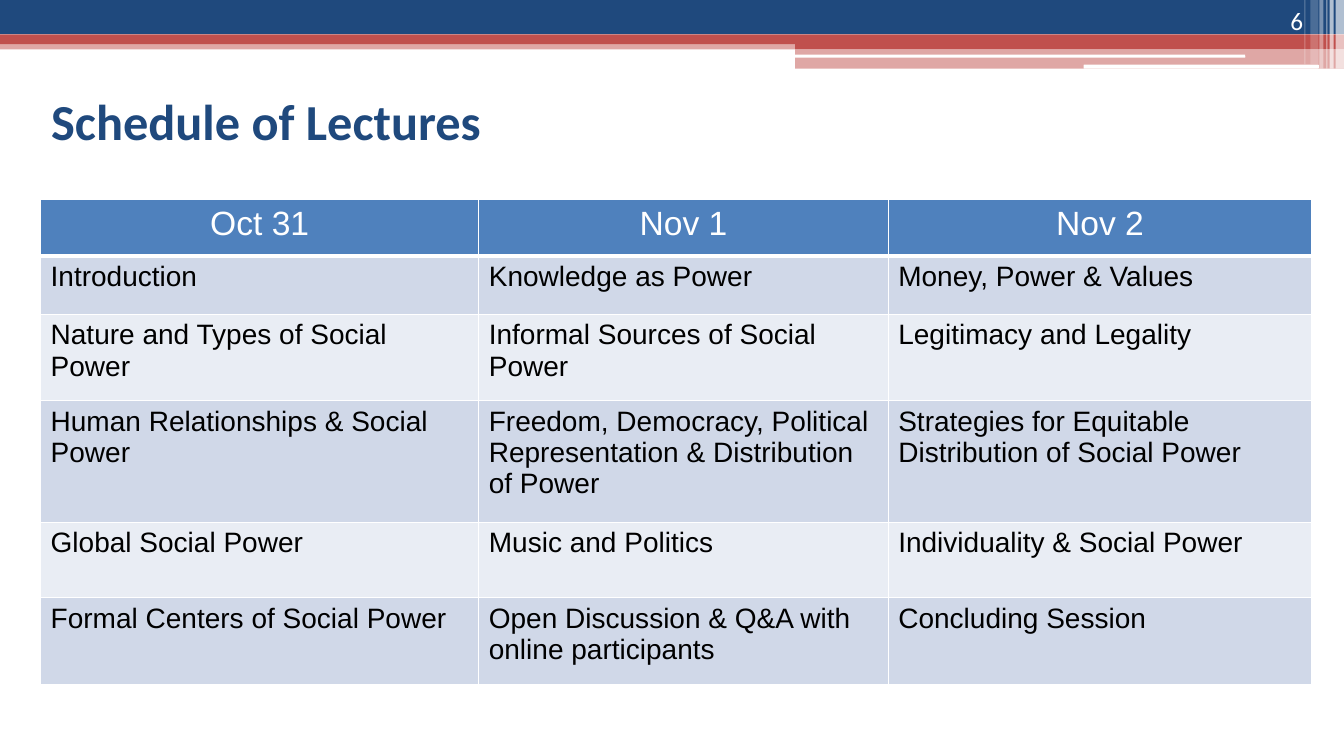
from lxml.etree import SubElement
from pptx import Presentation
from pptx.dml.color import RGBColor
from pptx.enum.shapes import MSO_SHAPE
from pptx.enum.text import MSO_ANCHOR, PP_ALIGN
from pptx.oxml.ns import qn
from pptx.util import Pt

NAVY, RED, WHITE, BLACK = "1F497D", "C0504D", "FFFFFF", "000000"
HEADER_FILL, ROW_FILLS = "4F81BD", ("D0D8E8", "E9EDF4")

TITLE = "Schedule of Lectures"
PAGE_NUMBER = "6"
SCHEDULE = [
    ("Oct 31", "Nov 1", "Nov 2"),
    ("Introduction", "Knowledge as Power", "Money, Power & Values"),
    ("Nature and Types of Social Power", "Informal Sources of Social Power",
     "Legitimacy and Legality"),
    ("Human Relationships & Social Power",
     "Freedom, Democracy, Political Representation & Distribution of Power",
     "Strategies for Equitable Distribution of Social Power"),
    ("Global Social Power", "Music and Politics", "Individuality & Social Power"),
    ("Formal Centers of Social Power",
     "Open Discussion & Q&A with online participants", "Concluding Session"),
]
COLUMN_WIDTHS = (313, 292.5, 302.5)
ROW_HEIGHTS = (40.3, 41.7, 61.7, 86.8, 54, 61.7)

# left, top, width, height, colour, opacity in percent
BANDS = [
    (0, 28.8, 960, 6.5, RED, 50),
    (0, 0, 960, 24.5, NAVY, 100),
    (0, 24.5, 960, 7, RED, 100),
    (568, 28, 392, 7.2, RED, 100),
    (568, 35.2, 392, 13.8, RED, 50),
]
ROUNDED_LINES = [(567.5, 39, 322, 2.2), (774, 46.2, 168, 2.8)]
# left, width, height, opacity in percent
STRIPES = [
    (954, 6, 49, 65),
    (949.7, 2.9, 49, 65),
    (947.5, 0.7, 49, 60),
    (942.5, 2.9, 49, 40),
    (936, 5.8, 46, 20),
    (931.7, 0.7, 46, 30),
]


def color(hex_code):
    return RGBColor.from_string(hex_code)


def add_block(page, left, top, width, height, fill, opacity=100, kind=MSO_SHAPE.RECTANGLE):
    block = page.shapes.add_shape(kind, Pt(left), Pt(top), Pt(width), Pt(height))
    block.shadow.inherit = False
    block.line.fill.background()
    block.fill.solid()
    block.fill.fore_color.rgb = color(fill)
    if opacity < 100:
        tint = block.fill._xPr.find(qn("a:solidFill"))[0]
        SubElement(tint, qn("a:alpha"), val=str(opacity * 1000))


def write(frame, text, size, ink, font="Arial", bold=False, align=PP_ALIGN.LEFT):
    frame.word_wrap = True
    para = frame.paragraphs[0]
    para.alignment = align
    span = para.add_run()
    span.text = text
    span.font.name = font
    span.font.size = Pt(size)
    span.font.bold = bold
    span.font.color.rgb = color(ink)


def add_text(page, left, top, width, height, text, anchor, **style):
    box = page.shapes.add_textbox(Pt(left), Pt(top), Pt(width), Pt(height))
    box.text_frame.vertical_anchor = anchor
    write(box.text_frame, text, font="Calibri", **style)


def set_borders(cell, bottom_width):
    """Draw white cell borders; they must come before the fill in the XML."""
    properties = cell._tc.get_or_add_tcPr()
    for side, width in (("L", 1), ("R", 1), ("T", 1), ("B", bottom_width)):
        edge = SubElement(properties, qn(f"a:ln{side}"), w=str(Pt(width)))
        SubElement(SubElement(edge, qn("a:solidFill")), qn("a:srgbClr"), val=WHITE)


def add_schedule(page):
    table = page.shapes.add_table(
        len(SCHEDULE), len(COLUMN_WIDTHS), Pt(29), Pt(142.6),
        Pt(sum(COLUMN_WIDTHS)), Pt(sum(ROW_HEIGHTS))).table
    for column, width in zip(table.columns, COLUMN_WIDTHS):
        column.width = Pt(width)
    for row, height in zip(table.rows, ROW_HEIGHTS):
        row.height = Pt(height)
    for r, entries in enumerate(SCHEDULE):
        header = r == 0
        for c, entry in enumerate(entries):
            cell = table.cell(r, c)
            set_borders(cell, 3 if header else 1)
            cell.fill.solid()
            cell.fill.fore_color.rgb = color(HEADER_FILL if header else ROW_FILLS[(r - 1) % 2])
            if header:
                write(cell.text_frame, entry, 24, WHITE, align=PP_ALIGN.CENTER)
            else:
                write(cell.text_frame, entry, 20, BLACK)


def main():
    deck = Presentation()
    deck.slide_width, deck.slide_height = Pt(960), Pt(540)
    page = deck.slides.add_slide(deck.slide_layouts[6])
    for band in BANDS:
        add_block(page, *band)
    for line in ROUNDED_LINES:
        add_block(page, *line, WHITE, kind=MSO_SHAPE.ROUNDED_RECTANGLE)
    for left, width, height, opacity in STRIPES:
        add_block(page, left, 0, width, height, WHITE, opacity)
    add_text(page, 29.5, 60.5, 532, 50.4, TITLE, MSO_ANCHOR.MIDDLE,
             size=36, ink=NAVY, bold=True)
    add_schedule(page)
    add_text(page, 858, 0, 80, 28.8, PAGE_NUMBER, MSO_ANCHOR.BOTTOM,
             size=18, ink=WHITE, align=PP_ALIGN.RIGHT)
    deck.save("out.pptx")


if __name__ == "__main__":
    main()
